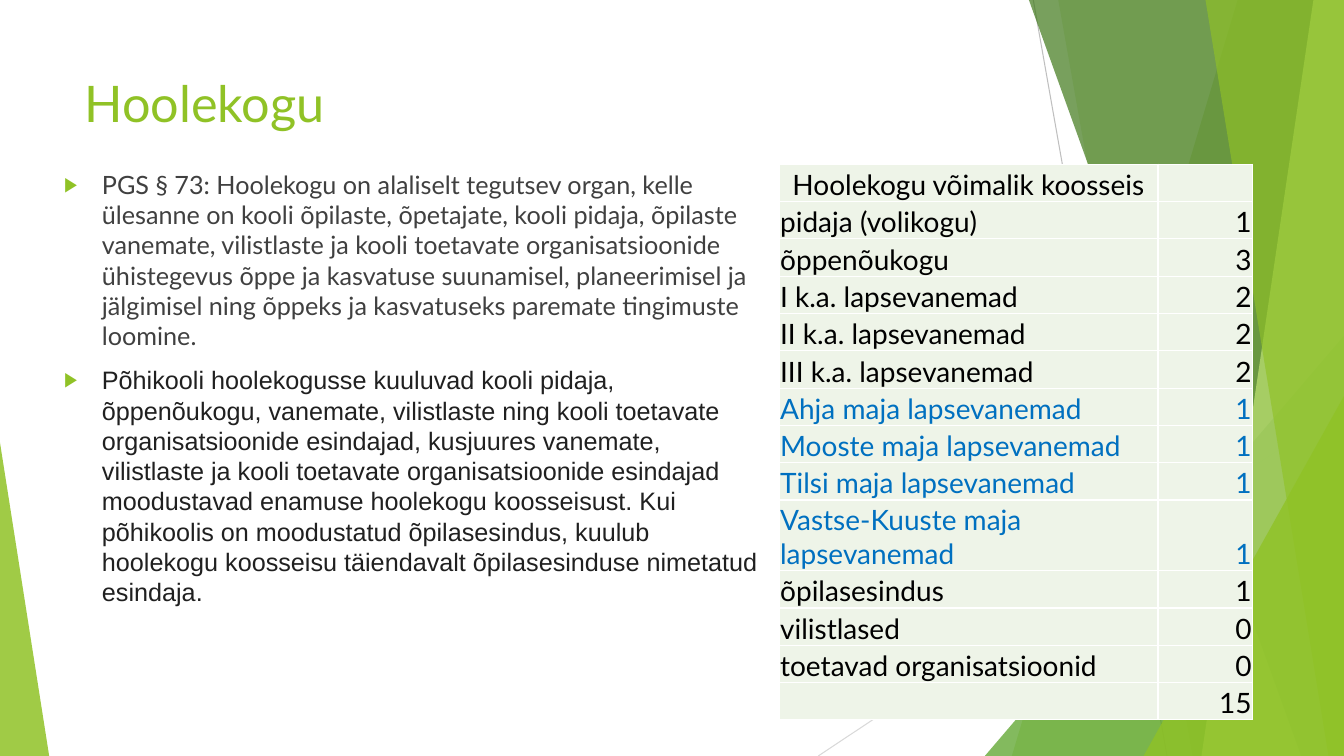
from dataclasses import dataclass

from lxml import etree
from pptx import Presentation
from pptx.dml.color import RGBColor
from pptx.enum.shapes import MSO_CONNECTOR, MSO_SHAPE
from pptx.enum.text import MSO_ANCHOR, PP_ALIGN
from pptx.oxml.ns import qn
from pptx.util import Cm, Pt

STRAIGHT = MSO_CONNECTOR.STRAIGHT
TRIANGLE = MSO_SHAPE.ISOSCELES_TRIANGLE
BOTTOM = MSO_ANCHOR.BOTTOM
LEFT, CENTER, RIGHT = PP_ALIGN.LEFT, PP_ALIGN.CENTER, PP_ALIGN.RIGHT


@dataclass(frozen=True)
class Theme:
    """Colours, fonts and type sizes of the slide."""
    green: str = "90C226"
    leaf: str = "54A021"
    forest: str = "3F7819"
    lime: str = "C0E474"
    ray: str = "BFBFBF"
    pale_ray: str = "D9D9D9"
    body: str = "404040"
    law: str = "202020"
    black: str = "000000"
    blue: str = "0070C0"
    cell: str = "EEF4E8"
    border: str = "FFFFFF"
    font: str = "Lato"
    law_font: str = "Arial"
    title_size: float = 36
    body_size: float = 18
    table_size: float = 20


THEME = Theme()
WIDTH, HEIGHT = 33.87, 19.05

RAYS = [
    ((26.04, 0), (29.41, HEIGHT), THEME.ray),
    ((WIDTH, 10.24), (20.62, HEIGHT), THEME.pale_ray),
]
BACK_SHARDS = [(31.19, 25.5, THEME.green, 30), (26.67, 30.05, THEME.green, 20)]
FRONT_SHARDS = [
    (25.93, 32.79, THEME.forest, 70),
    (33.1, 30.28, THEME.lime, 70),
    (30.38, 33.48, THEME.green, 65),
]

DUTIES = (
    "PGS § 73: Hoolekogu on alaliselt tegutsev organ, kelle ülesanne on kooli õpilaste, "
    "õpetajate, kooli pidaja, õpilaste vanemate, vilistlaste ja kooli toetavate "
    "organisatsioonide ühistegevus õppe ja kasvatuse suunamisel, planeerimisel ja "
    "jälgimisel ning õppeks ja kasvatuseks paremate tingimuste loomine."
)
MEMBERSHIP = (
    "Põhikooli hoolekogusse kuuluvad kooli pidaja, õppenõukogu, vanemate, vilistlaste "
    "ning kooli toetavate organisatsioonide esindajad, kusjuures vanemate, vilistlaste "
    "ja kooli toetavate organisatsioonide esindajad moodustavad enamuse hoolekogu "
    "koosseisust. Kui põhikoolis on moodustatud õpilasesindus, kuulub hoolekogu "
    "koosseisu täiendavalt õpilasesinduse nimetatud esindaja."
)
SEATS = [
    ("Hoolekogu võimalik koosseis", ""),
    ("pidaja (volikogu)", "1"),
    ("õppenõukogu", "3"),
    ("I k.a. lapsevanemad", "2"),
    ("II k.a. lapsevanemad", "2"),
    ("III k.a. lapsevanemad", "2"),
    ("Ahja maja lapsevanemad", "1"),
    ("Mooste maja lapsevanemad", "1"),
    ("Tilsi maja lapsevanemad", "1"),
    ("Vastse-Kuuste maja lapsevanemad", "1"),
    ("õpilasesindus", "1"),
    ("vilistlased", "0"),
    ("toetavad organisatsioonid", "0"),
    ("", "15"),
]


def add_run(paragraph, text, size, color, font=THEME.font):
    """Append one styled run."""
    run = paragraph.add_run()
    run.text = text
    run.font.size = Pt(size)
    run.font.name = font
    run.font.color.rgb = RGBColor.from_string(color)


def tint(shape, color, opacity):
    """Fill a facet with a translucent colour, without outline or shadow."""
    shape.shadow.inherit = False
    shape.line.fill.background()
    shape.fill.solid()
    shape.fill.fore_color.rgb = RGBColor.from_string(color)
    srgb = shape.fill._xPr.find(qn("a:solidFill"))[0]
    etree.SubElement(srgb, qn("a:alpha"), val=str(opacity * 1000))


def add_shards(slide, shards, left, top, width, height):
    """Draw slanted facets that reach the right edge of the box."""
    for upper, lower, color, opacity in shards:
        pen = slide.shapes.build_freeform(Cm(left + upper), Cm(top))
        pen.add_line_segments([
            (Cm(left + width), Cm(top)),
            (Cm(left + width), Cm(top + height)),
            (Cm(left + lower), Cm(top + height)),
        ])
        tint(pen.convert_to_shape(), color, opacity)


def add_corner(slide, left, top, width, height, apex, color, opacity):
    """Draw a right triangle with its apex at the given side."""
    corner = slide.shapes.add_shape(TRIANGLE, Cm(left), Cm(top), Cm(width), Cm(height))
    corner.adjustments[0] = apex
    tint(corner, color, opacity)


def add_backdrop(slide, left, top, width, height):
    """Draw the rays and green facets inside the box."""
    for (x1, y1), (x2, y2), color in RAYS:
        ray = slide.shapes.add_connector(
            STRAIGHT, Cm(left + x1), Cm(top + y1), Cm(left + x2), Cm(top + y2))
        ray.line.color.rgb = RGBColor.from_string(color)
        ray.line.width = Pt(0.75)
        etree.SubElement(ray._element.spPr, qn("a:effectLst"))
    right, bottom = left + width, top + height
    add_shards(slide, BACK_SHARDS, left, top, width, height)
    add_corner(slide, right - 9.05, bottom - 10.59, 9.05, 10.59, 1, THEME.leaf, 72)
    add_shards(slide, FRONT_SHARDS, left, top, width, height)
    add_corner(slide, right - 5.05, bottom - 9.07, 5.05, 9.07, 1, THEME.green, 80)
    add_corner(slide, left, bottom - 7.9, 1.24, 7.9, 0, THEME.green, 85)


def add_text_frame(slide, left, top, width, height):
    """Add a wrapping text box and return its frame."""
    frame = slide.shapes.add_textbox(Cm(left), Cm(top), Cm(width), Cm(height)).text_frame
    frame.word_wrap = True
    return frame


def add_title(slide, left, top, width, height):
    """Write the slide title."""
    frame = add_text_frame(slide, left, top, width, height)
    add_run(frame.paragraphs[0], "Hoolekogu", THEME.title_size, THEME.green)


def add_body(slide, left, top, width, height):
    """Write the two bulleted paragraphs."""
    frame = add_text_frame(slide, left, top, width, height)
    duties, membership = frame.paragraphs[0], frame.add_paragraph()
    add_run(duties, DUTIES, THEME.body_size, THEME.body)
    add_run(membership, MEMBERSHIP, THEME.body_size, THEME.law, THEME.law_font)
    membership.line_spacing = Pt(21.6)
    for paragraph in (duties, membership):
        paragraph.space_before = Pt(10)
        props = paragraph._p.get_or_add_pPr()
        props.set("marL", str(Cm(0.95)))
        props.set("indent", str(-Cm(0.95)))
        bullet_color = etree.SubElement(props, qn("a:buClr"))
        etree.SubElement(bullet_color, qn("a:srgbClr"), val=THEME.green)
        etree.SubElement(props, qn("a:buSzPct"), val="80000")
        etree.SubElement(props, qn("a:buFont"), typeface=THEME.law_font)
        etree.SubElement(props, qn("a:buChar"), char="▶")


def style_cell(cell):
    """Give a cell its fill, margins and white borders."""
    cell.fill.solid()
    cell.fill.fore_color.rgb = RGBColor.from_string(THEME.cell)
    cell.vertical_anchor = BOTTOM
    cell.margin_left = cell.margin_right = cell.margin_top = Cm(0.03)
    cell.margin_bottom = 0
    props = cell._tc.get_or_add_tcPr()
    for index, side in enumerate(("a:lnL", "a:lnR", "a:lnT", "a:lnB")):
        border = etree.Element(qn(side), w=str(Pt(1)))
        fill = etree.SubElement(border, qn("a:solidFill"))
        etree.SubElement(fill, qn("a:srgbClr"), val=THEME.border)
        props.insert(index, border)


def add_seats(slide, left, top, width, height):
    """Build the table of council seats."""
    table = slide.shapes.add_table(
        len(SEATS), 2, Cm(left), Cm(top), Cm(width), Cm(height)).table
    table.first_row = table.horz_banding = False
    for column, share in zip(table.columns, (0.8, 0.2)):
        column.width = Cm(width * share)
    tall = 1.78
    for row, (group, count) in enumerate(SEATS):
        is_tall = group.startswith("Vastse")
        table.rows[row].height = Cm(tall if is_tall else (height - tall) / (len(SEATS) - 1))
        color = THEME.blue if " maja " in group else THEME.black
        alignments = (LEFT if row else CENTER, RIGHT)
        for col, (text, alignment) in enumerate(zip((group, count), alignments)):
            cell = table.cell(row, col)
            style_cell(cell)
            paragraph = cell.text_frame.paragraphs[0]
            paragraph.alignment = alignment
            if text:
                add_run(paragraph, text, THEME.table_size, color)


def main():
    """Build and save the slide."""
    deck = Presentation()
    deck.slide_width, deck.slide_height = Cm(WIDTH), Cm(HEIGHT)
    slide = deck.slides.add_slide(deck.slide_layouts[6])
    add_backdrop(slide, 0, 0, WIDTH, HEIGHT)
    add_title(slide, 1.88, 1.7, 23.88, 3.66)
    add_body(slide, 1.37, 4.14, 18.26, 10.77)
    add_seats(slide, 19.63, 4.14, 11.94, 14)
    deck.save("out.pptx")


if __name__ == "__main__":
    main()
